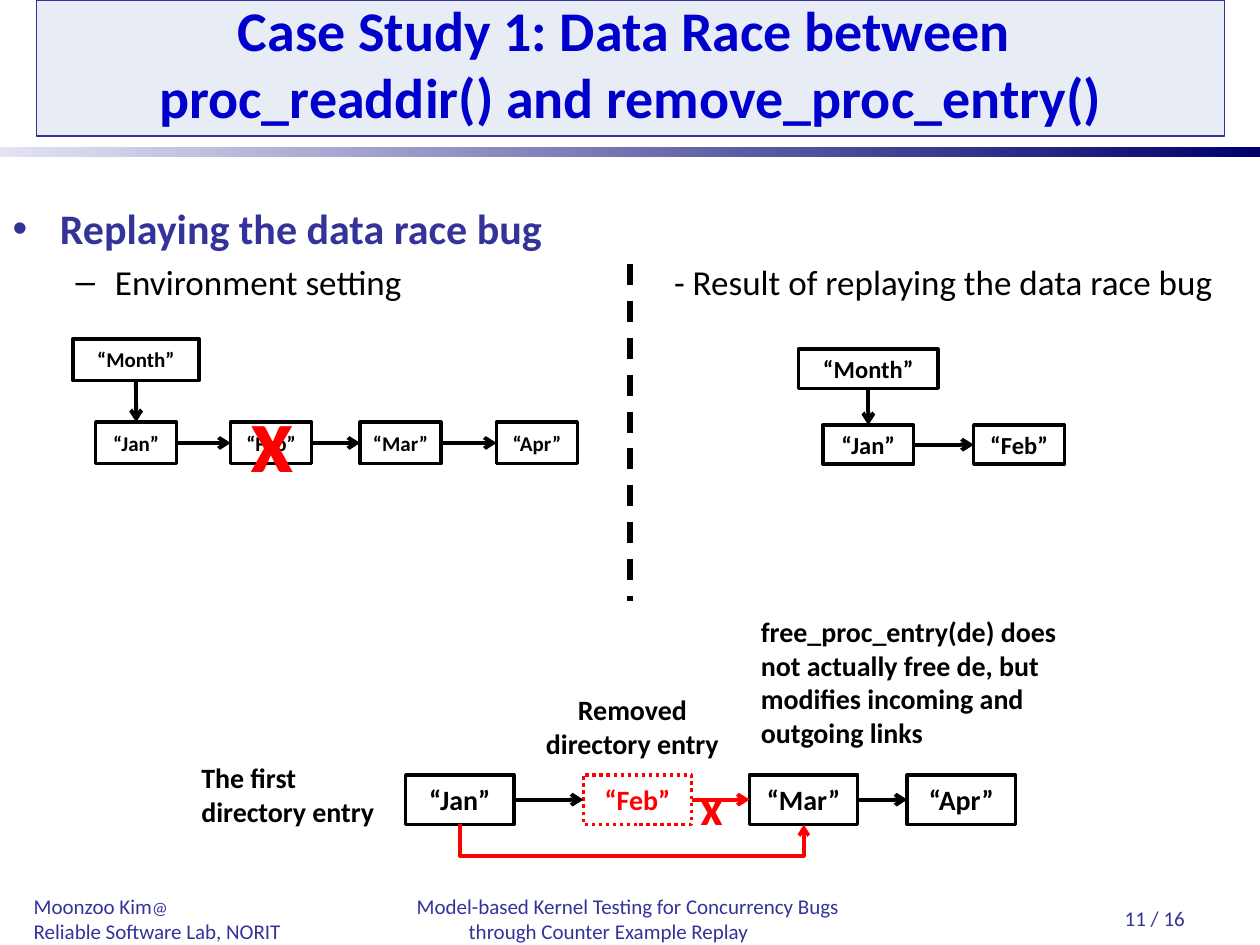
"""Build the slide on replaying a data race bug in directory entries."""
import dataclasses

import lxml.etree
import pptx
import pptx.dml.color
import pptx.enum.dml
import pptx.enum.shapes
import pptx.enum.text
import pptx.oxml.ns
import pptx.util

Cm, Pt = pptx.util.Cm, pptx.util.Pt
qn = pptx.oxml.ns.qn
ALIGN = pptx.enum.text.PP_ALIGN
ANCHOR = pptx.enum.text.MSO_ANCHOR
DASH = pptx.enum.dml.MSO_LINE
CONNECTOR = pptx.enum.shapes.MSO_CONNECTOR
RECT = pptx.enum.shapes.MSO_SHAPE.RECTANGLE
COLORS = {"black": "000000", "white": "FFFFFF", "red": "FF0000", "navy": "333399",
          "title": "0000CC", "panel": "E7ECF5", "pale": "E3E3F4", "deep": "00006D"}
BOTTOM, LEFT, RIGHT, TOP = 2, 1, 3, 0


@dataclasses.dataclass
class Row:
    """A chain of equally sized entries, with lengths in centimetres."""
    top: float
    width: float
    height: float
    size: int
    entries: dict
    removed: str = ""


@dataclasses.dataclass
class Label:
    """A free text, with lengths in centimetres."""
    left: float
    top: float
    width: float
    height: float
    lines: tuple
    size: int
    color: str = "black"
    bold: bool = True
    align: ALIGN = ALIGN.LEFT


ENVIRONMENT = Row(8.51, 1.63, 0.84, 12,
                  {"Jan": 1.93, "Feb": 4.65, "Mar": 7.26, "Apr": 10.01})
RESULT = Row(8.57, 1.83, 0.79, 14, {"Jan": 16.59, "Feb": 19.63})
REMOVAL = Row(15.62, 2.18, 1, 16,
              {"Jan": 8.18, "Feb": 11.76, "Mar": 15.11, "Apr": 18.29}, "Feb")
LABELS = [
    Label(4.8, 7.49, 1.27, 2.57, ("x",), 54, "red"),
    Label(13.34, 5.13, 11.6, 1.63, ("- Result of replaying the data race bug",), 20, bold=False),
    Label(9.37, 13.84, 6.76, 1.63, ("Removed", "directory entry"), 16, align=ALIGN.CENTER),
    Label(3.81, 15.21, 5.36, 1.63, ("The first", "directory entry"), 16),
    Label(13.87, 15.52, 1.19, 1.45, ("x",), 28, "red"),
    Label(15.09, 12.27, 6.99, 3, ("free_proc_entry(de) does not actually free de, "
                                  "but modifies incoming and outgoing links",), 16),
    Label(20.32, 18.14, 5.92, 0.71, ("11 / 16",), 12, "navy", False, ALIGN.CENTER),
]
FOOTER = [("Moonzoo Kim", "@", "Model-based Kernel Testing for Concurrency Bugs", 7.72),
          ("Reliable Software Lab, NORIT", "", "through Counter Example Replay", 8.77)]


def rgb(name: str):
    return pptx.dml.color.RGBColor.from_string(COLORS[name])


def place(sp, left: float, top: float, width: float, height: float) -> None:
    sp.left, sp.top, sp.width, sp.height = Cm(left), Cm(top), Cm(width), Cm(height)


def set_font(p, size: int, color: str, bold: bool) -> None:
    f = p.font
    f.name, f.size, f.bold = "Calibri", Pt(size), bold
    f.color.rgb = rgb(color)


def add_label(s, label: Label) -> None:
    tf = s.shapes.add_textbox(Cm(label.left), Cm(label.top),
                              Cm(label.width), Cm(label.height)).text_frame
    tf.word_wrap = True
    tf.text = "\n".join(label.lines)
    for p in tf.paragraphs:
        p.alignment = label.align
        set_font(p, label.size, label.color, label.bold)


def add_box(s, name: str, left: float, top: float, width: float, row: Row):
    color = "red" if name == row.removed else "black"
    sp = s.shapes.add_shape(RECT, Cm(left), Cm(top), Cm(width), Cm(row.height))
    sp.shadow.inherit = False
    sp.fill.solid()
    sp.fill.fore_color.rgb = rgb("white")
    sp.line.color.rgb = rgb(color)
    sp.line.width = Pt(2)
    if name == row.removed:
        sp.line.dash_style = DASH.ROUND_DOT
    tf = sp.text_frame
    tf.word_wrap = False
    tf.vertical_anchor = ANCHOR.MIDDLE
    p = tf.paragraphs[0]
    p.text = f"“{name}”"
    p.alignment = ALIGN.CENTER
    set_font(p, row.size, color, True)
    return sp


def add_line(s, kind, ends: tuple, color: str, width: float, arrow: bool = True):
    cn = s.shapes.add_connector(kind, *(Cm(v) for v in ends))
    cn.line.color.rgb = rgb(color)
    cn.line.width = Pt(width)
    if arrow:
        lxml.etree.SubElement(cn.line._get_or_add_ln(), qn("a:tailEnd"), type="arrow")
    lxml.etree.SubElement(cn._element.spPr, qn("a:effectLst"))
    return cn


def join(s, first, first_side: int, second, second_side: int, color: str = "black") -> None:
    cn = add_line(s, CONNECTOR.STRAIGHT, (0, 0, 1, 1), color, 2.25)
    cn.begin_connect(first, first_side)
    cn.end_connect(second, second_side)


def add_row(s, row: Row) -> dict:
    boxes = {n: add_box(s, n, x, row.top, row.width, row) for n, x in row.entries.items()}
    names = list(boxes)
    for a, b in zip(names, names[1:]):
        join(s, boxes[a], RIGHT, boxes[b], LEFT, "red" if a == row.removed else "black")
    return boxes


def add_tree(s, row: Row, left: float, top: float, width: float) -> None:
    boxes = add_row(s, row)
    month = add_box(s, "Month", left, top, width, row)
    join(s, month, BOTTOM, boxes["Jan"], TOP)


def add_bypass(s, row: Row) -> None:
    start, end = (row.entries[n] + row.width / 2 for n in ("Jan", "Mar"))
    span, depth, thin = end - start, 0.64, 0.01
    left, top = (start + end) / 2, row.top + row.height - span / 2
    cn = add_line(s, CONNECTOR.ELBOW, (left, top, left + thin, top + span), "red", 2)
    xfrm = cn._element.spPr.find(qn("a:xfrm"))
    xfrm.set("rot", "16200000")
    xfrm.set("flipH", "1")
    guides = cn._element.spPr.find(qn("a:prstGeom")).get_or_add_avLst()
    lxml.etree.SubElement(guides, qn("a:gd"), name="adj1",
                          fmla=f"val {round(depth / thin * 100000)}")


def add_footer(s) -> None:
    tf = s.shapes.add_textbox(Cm(0.43), Cm(17.88), Cm(19.69), Cm(1.27)).text_frame
    tf.word_wrap = True
    for i, (left, mark, right, stop) in enumerate(FOOTER):
        p = tf.add_paragraph() if i else tf.paragraphs[0]
        tabs = lxml.etree.SubElement(p._p.get_or_add_pPr(), qn("a:tabLst"))
        lxml.etree.SubElement(tabs, qn("a:tab"), pos=str(Cm(stop)), algn="l")
        set_font(p, 12, "navy", False)
        p.add_run().text = left
        if mark:
            r = p.add_run()
            r.text = mark
            r.font.size = Pt(10)
        p.add_run().text = "\t" + right


def fill_placeholders(s) -> None:
    title, body = s.shapes.title, s.placeholders[1]
    place(title, 0.74, 0, 23.95, 2.74)
    title.fill.solid()
    title.fill.fore_color.rgb = rgb("panel")
    title.line.color.rgb = rgb("navy")
    title.line.width = Pt(0.75)
    tf = title.text_frame
    tf.text = "Case Study 1: Data Race between \vproc_readdir() and remove_proc_entry()"
    tf.auto_size = pptx.enum.text.MSO_AUTO_SIZE.NONE
    tf.vertical_anchor = ANCHOR.BOTTOM
    tf.margin_left = tf.margin_right = 0
    set_font(tf.paragraphs[0], 32, "title", True)
    place(body, 0, 3.96, 23.93, 2.24)
    tf = body.text_frame
    tf.text = "Replaying the data race bug\nEnvironment setting"
    tf.auto_size = pptx.enum.text.MSO_AUTO_SIZE.NONE
    set_font(tf.paragraphs[0], 24, "navy", True)
    tf.paragraphs[1].level = 1
    set_font(tf.paragraphs[1], 20, "black", False)


def add_bar(s) -> None:
    sp = s.shapes.add_shape(RECT, 0, Cm(2.97), Cm(25.4), Cm(0.2))
    sp.shadow.inherit = False
    sp.line.fill.background()
    sp.fill.gradient()
    sp.fill.gradient_angle = 0
    for stop, name in zip(sp.fill.gradient_stops, ("pale", "deep")):
        stop.color.rgb = rgb(name)


def main() -> None:
    prs = pptx.Presentation()
    prs.slide_width, prs.slide_height = Cm(25.4), Cm(19.05)
    s = prs.slides.add_slide(prs.slide_layouts[1])
    fill_placeholders(s)
    add_bar(s)
    add_footer(s)
    add_tree(s, ENVIRONMENT, 1.47, 6.83, 2.54)
    add_tree(s, RESULT, 16.1, 7.04, 2.81)
    divider = add_line(s, CONNECTOR.STRAIGHT, (12.7, 5.33, 12.7, 12.12), "black", 3, False)
    divider.line.dash_style = DASH.DASH
    add_row(s, REMOVAL)
    add_bypass(s, REMOVAL)
    for label in LABELS:
        add_label(s, label)
    prs.save("out.pptx")


if __name__ == "__main__":
    main()
